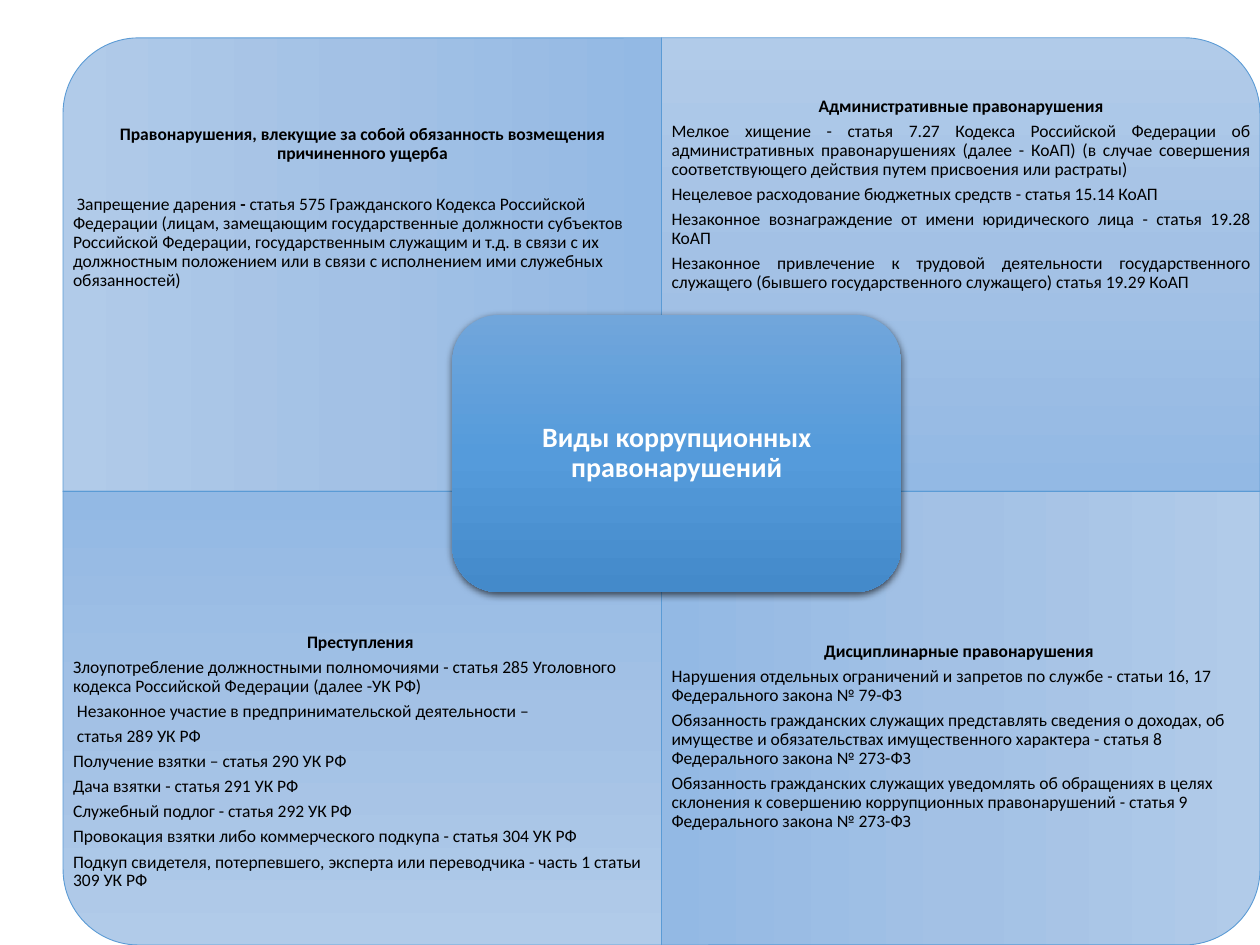
from pptx import Presentation
from pptx.dml.color import RGBColor
from pptx.enum.shapes import MSO_SHAPE as Shape
from pptx.enum.text import MSO_ANCHOR as Anchor, PP_ALIGN as Align
from pptx.oxml import parse_xml
from pptx.oxml.ns import nsdecls
from pptx.util import Pt

COLORS = {
    "quadrant": ["B1CBE9", "A3C1E5", "93B9E4"],
    "center": ["71A6DB", "559BDB", "448ACA"],
    "outline": "5B9BD5",
    "text": "000000",
    "title": "FFFFFF",
    "shadow": "000000",
}
LEFT, TOP, WIDTH, HEIGHT = 36, 21.6, 342, 259.2
TEXT_HEIGHT = 194.4
INSET = 5.76
BLANK = 14.5

quadrants = [
    (0, 0, 270, 0, 18, Align.LEFT,
     "Правонарушения, влекущие за собой обязанность возмещения причиненного ущерба",
     [[(" Запрещение дарения ", False), ("- ", True),
       ("статья 575 Гражданского Кодекса Российской Федерации (лицам, замещающим "
        "государственные должности субъектов Российской Федерации, государственным "
        "служащим и т.д. в связи с их должностным положением или в связи с исполнением "
        "ими служебных обязанностей)", False)]]),
    (1, 0, 0, BLANK, 3.5, Align.JUSTIFY,
     "Административные правонарушения",
     ["Мелкое хищение - статья 7.27 Кодекса Российской Федерации об административных "
      "правонарушениях (далее - КоАП) (в случае совершения соответствующего действия "
      "путем присвоения или растраты)",
      "Нецелевое расходование бюджетных средств - статья 15.14 КоАП",
      "Незаконное вознаграждение от имени юридического лица - статья 19.28 КоАП",
      "Незаконное привлечение к трудовой деятельности государственного служащего "
      "(бывшего государственного служащего) статья 19.29 КоАП"]),
    (0, 1, 180, BLANK, 3.5, Align.LEFT,
     "Преступления ",
     ["Злоупотребление должностными полномочиями - статья 285 Уголовного кодекса "
      "Российской Федерации (далее -УК РФ)",
      " Незаконное участие в предпринимательской деятельности –",
      " статья 289 УК РФ",
      "Получение взятки – статья 290 УК РФ",
      "Дача взятки - статья 291 УК РФ",
      "Служебный подлог - статья 292 УК РФ",
      "Провокация взятки либо коммерческого подкупа - статья 304 УК РФ",
      "Подкуп свидетеля, потерпевшего, эксперта или переводчика - часть 1 статьи 309 УК РФ"]),
    (1, 1, 90, 3 * BLANK, 3.5, Align.LEFT,
     "Дисциплинарные правонарушения ",
     ["Нарушения отдельных ограничений и запретов по службе - статьи 16, 17 "
      "Федерального закона № 79-ФЗ",
      "Обязанность гражданских служащих представлять сведения о доходах, об имуществе "
      "и обязательствах имущественного характера - статья 8 Федерального закона № 273-ФЗ",
      "Обязанность гражданских служащих уведомлять об обращениях в целях склонения к "
      "совершению коррупционных правонарушений - статья 9 Федерального закона № 273-ФЗ"]),
]


def fill_gradient(shape, colors):
    shape.fill.gradient()
    shape.fill.gradient_angle = 270
    stops = "".join(
        f'<a:gs pos="{i * 50000}"><a:srgbClr val="{color}"/></a:gs>'
        for i, color in enumerate(colors))
    gradient = shape._element.spPr.find(
        "{http://schemas.openxmlformats.org/drawingml/2006/main}gradFill")
    gradient.replace(gradient[0], parse_xml(f'<a:gsLst {nsdecls("a")}>{stops}</a:gsLst>'))


def style_paragraph(paragraph, size, color, align, space_after):
    paragraph.alignment = align
    paragraph.line_spacing = 0.9
    paragraph.space_before = Pt(0)
    paragraph.space_after = Pt(space_after)
    paragraph.font.name = "Calibri"
    paragraph.font.size = Pt(size)
    paragraph.font.color.rgb = RGBColor.from_string(COLORS[color])


deck = Presentation()
deck.slide_width, deck.slide_height = Pt(720), Pt(540)
slide = deck.slides.add_slide(deck.slide_layouts[6])

for column, row, rotation, lift, heading_gap, align, heading, articles in quadrants:
    left, top = LEFT + column * WIDTH, TOP + row * HEIGHT
    width, height = (WIDTH, HEIGHT) if rotation % 180 == 0 else (HEIGHT, WIDTH)
    quadrant = slide.shapes.add_shape(
        Shape.ROUND_1_RECTANGLE,
        Pt(left + (WIDTH - width) / 2), Pt(top + (HEIGHT - height) / 2),
        Pt(width), Pt(height))
    quadrant.rotation = rotation
    quadrant.shadow.inherit = False
    fill_gradient(quadrant, COLORS["quadrant"])
    quadrant.line.color.rgb = RGBColor.from_string(COLORS["outline"])
    quadrant.line.width = Pt(0.5)

    offenses = slide.shapes.add_textbox(
        Pt(left), Pt(top + row * (HEIGHT - TEXT_HEIGHT)), Pt(WIDTH), Pt(TEXT_HEIGHT)).text_frame
    offenses.word_wrap = True
    offenses.vertical_anchor = Anchor.MIDDLE
    offenses.margin_left = offenses.margin_right = offenses.margin_top = Pt(INSET)
    offenses.margin_bottom = Pt(INSET + lift)
    heading_line = offenses.paragraphs[0]
    heading_line.text = heading
    heading_line.font.bold = True
    style_paragraph(heading_line, 10, "text", Align.CENTER, heading_gap)
    for article in articles:
        article_line = offenses.add_paragraph()
        style_paragraph(article_line, 10, "text", align, 3.5)
        if isinstance(article, str):
            article_line.text = article
            continue
        for words, bold in article:
            part = article_line.add_run()
            part.text = words
            part.font.bold = bold

center = slide.shapes.add_shape(
    Shape.ROUNDED_RECTANGLE, Pt(258.5), Pt(180), Pt(256.5), Pt(158.4))
fill_gradient(center, COLORS["center"])
center.line.fill.background()
center._element.spPr.append(parse_xml(
    f'<a:effectLst {nsdecls("a")}>'
    f'<a:outerShdw blurRad="{Pt(4.5)}" dist="{Pt(1.5)}" dir="5400000" algn="ctr" rotWithShape="0">'
    f'<a:srgbClr val="{COLORS["shadow"]}"><a:alpha val="63000"/></a:srgbClr>'
    '</a:outerShdw></a:effectLst>'))
topic = center.text_frame
topic.word_wrap = True
topic.vertical_anchor = Anchor.MIDDLE
topic.margin_left = topic.margin_right = topic.margin_top = topic.margin_bottom = Pt(5)
topic_line = topic.paragraphs[0]
topic_line.text = "Виды коррупционных правонарушений"
topic_line.font.bold = True
style_paragraph(topic_line, 16, "title", Align.CENTER, 5.6)

deck.save("out.pptx")
